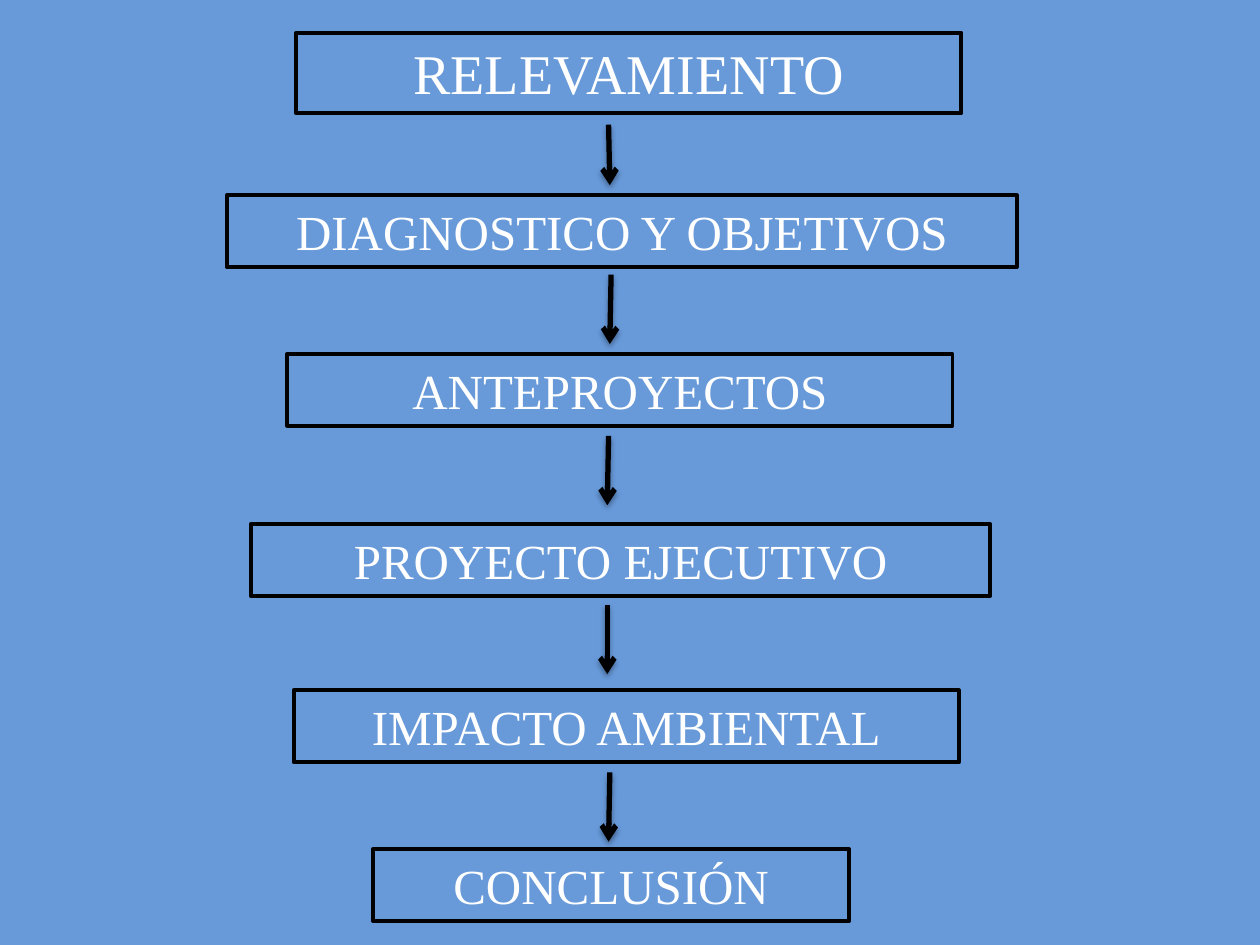
from typing import NamedTuple

from pptx import Presentation
from pptx.dml.color import RGBColor as RGB
from pptx.enum.shapes import MSO_CONNECTOR as Connector
from pptx.enum.text import MSO_AUTO_SIZE as AutoSize, PP_ALIGN as Align
from pptx.oxml import parse_xml
from pptx.oxml.ns import nsdecls, qn
from pptx.slide import Slide
from pptx.util import Inches, Pt

COLORS = {"background": "689ADA", "line": "000000", "text": "FFFFFF"}
FONT = "Times New Roman"


class Step(NamedTuple):
    text: str
    left: float
    top: float
    width: float
    height: float = 0.57
    size: int = 28


class Arrow(NamedTuple):
    x1: float
    y1: float
    x2: float
    length: float = 0.55


STEPS = [
    Step("RELEVAMIENTO", 2.35, 0.26, 5.28, 0.64, 32),
    Step("DIAGNOSTICO Y OBJETIVOS", 1.8, 1.55, 6.27),
    Step("ANTEPROYECTOS", 2.28, 2.81, 5.28),
    Step("PROYECTO EJECUTIVO", 1.99, 4.16, 5.87),
    Step("IMPACTO AMBIENTAL", 2.33, 5.48, 5.28),
    Step("CONCLUSIÓN", 2.96, 6.74, 3.78),
]

ARROWS = [
    Arrow(4.83, 0.99, 4.84, 0.48),
    Arrow(4.85, 2.18, 4.84),
    Arrow(4.83, 3.46, 4.82),
    Arrow(4.82, 4.8, 4.82),
    Arrow(4.84, 6.13, 4.83),
]


def color(name: str) -> RGB:
    return RGB.from_string(COLORS[name])


def draw_step(s: Slide, step: Step) -> None:
    sp = s.shapes.add_textbox(Inches(step.left), Inches(step.top),
                              Inches(step.width), Inches(step.height))
    sp.line.color.rgb = color("line")
    sp.line.width = Pt(2.25)
    tf = sp.text_frame
    tf.word_wrap = True
    tf.auto_size = AutoSize.SHAPE_TO_FIT_TEXT
    p = tf.paragraphs[0]
    p.alignment = Align.CENTER
    r = p.add_run()
    r.text = step.text
    r.font.name = FONT
    r.font.size = Pt(step.size)
    r.font.color.rgb = color("text")


def draw_arrow(s: Slide, arrow: Arrow) -> None:
    cx = s.shapes.add_connector(Connector.STRAIGHT, Inches(arrow.x1), Inches(arrow.y1),
                                Inches(arrow.x2), Inches(arrow.y1 + arrow.length))
    cx.line.color.rgb = color("line")
    cx.line.width = Pt(3)
    sp_pr = cx._element.spPr
    sp_pr.find(qn("a:ln")).append(parse_xml(f'<a:tailEnd {nsdecls("a")} type="arrow"/>'))
    sp_pr.append(parse_xml(
        f'<a:effectLst {nsdecls("a")}>'
        f'<a:outerShdw blurRad="{Pt(3.1)}" dist="{Pt(1.8)}" dir="5400000" rotWithShape="0">'
        f'<a:srgbClr val="{COLORS["line"]}"><a:alpha val="35000"/></a:srgbClr>'
        '</a:outerShdw></a:effectLst>'))


def main() -> None:
    prs = Presentation()
    prs.slide_width, prs.slide_height = Inches(10), Inches(7.5)
    s = prs.slides.add_slide(prs.slide_layouts[6])
    fill = s.background.fill
    fill.solid()
    fill.fore_color.rgb = color("background")
    for step in STEPS:
        draw_step(s, step)
    for arrow in ARROWS:
        draw_arrow(s, arrow)
    prs.save("out.pptx")


if __name__ == "__main__":
    main()
